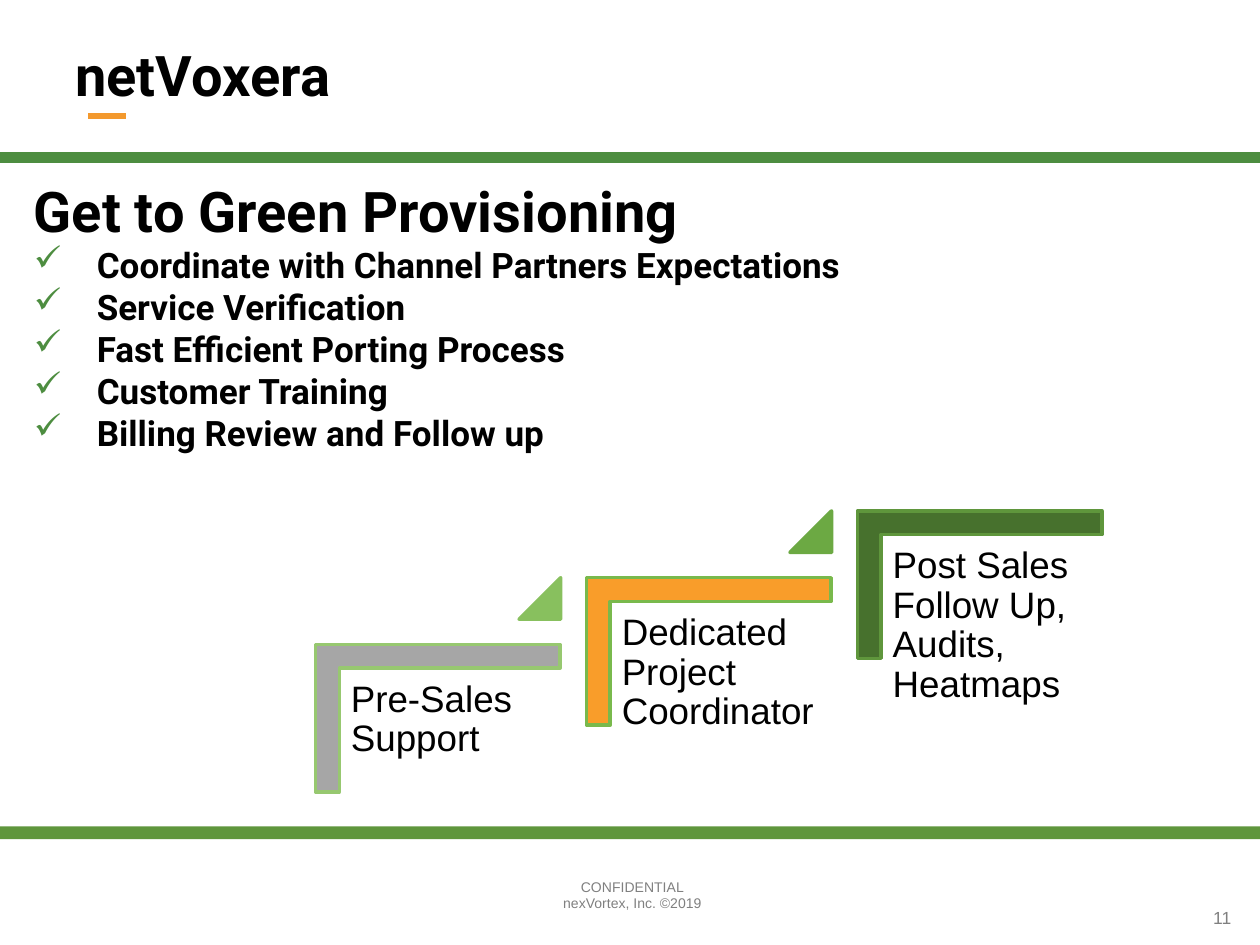
from dataclasses import dataclass
from lxml import etree
from pptx import Presentation
from pptx.dml.color import RGBColor
from pptx.enum.shapes import MSO_CONNECTOR, MSO_SHAPE
from pptx.enum.text import MSO_ANCHOR, PP_ALIGN
from pptx.oxml.ns import qn
from pptx.util import Emu, Inches, Pt

LINE = MSO_CONNECTOR.STRAIGHT
RECT = MSO_SHAPE.RECTANGLE
CORNER = MSO_SHAPE.CORNER
WEDGE = MSO_SHAPE.ISOSCELES_TRIANGLE
TOP, MID = MSO_ANCHOR.TOP, MSO_ANCHOR.MIDDLE
LEFT, CENTER, RIGHT = PP_ALIGN.LEFT, PP_ALIGN.CENTER, PP_ALIGN.RIGHT

WIDE, HIGH = Inches(10), Inches(7.5)
COLS, ROWS = 100, 75


@dataclass(frozen=True)
class Theme:
    ink: str = "000000"
    paper: str = "FFFFFF"
    muted: str = "808080"
    accent: str = "F3992E"
    rule: str = "4D8D40"
    band: str = "5F963C"
    head: str = "Roboto"
    body: str = "Arial"
    big: int = 32
    item: int = 20
    step: int = 21
    page: int = 10
    foot: int = 8


@dataclass(frozen=True)
class Box:
    col: float
    row: float
    cols: float
    rows: float

    def frame(self) -> tuple[Emu, Emu, Emu, Emu]:
        return across(self.col), down(self.row), across(self.cols), down(self.rows)


@dataclass(frozen=True)
class Style:
    font: str
    size: int
    color: str
    bold: bool = False
    align: PP_ALIGN = LEFT
    space: float = 1.0


@dataclass(frozen=True)
class Step:
    label: str
    fill: str
    edge: str
    wedge: str = ""


THEME = Theme()
TITLE = Style(THEME.head, THEME.big, THEME.ink, True)
ITEM = Style(THEME.head, THEME.item, THEME.ink, True)
LABEL = Style(THEME.body, THEME.step, THEME.ink, space=0.9)
FOOT = Style(THEME.body, THEME.foot, THEME.muted, align=CENTER)
PAGE = Style(THEME.body, THEME.page, THEME.muted, align=RIGHT)

ITEMS = [
    "Coordinate with Channel Partners Expectations",
    "Service Verification",
    "Fast Efficient Porting Process",
    "Customer Training",
    "Billing Review and Follow up",
]
STEPS = [
    Step("Pre-Sales Support", "A6A6A6", "97C870", "88C05E"),
    Step("Dedicated Project Coordinator", "F99D2A", "79B94C", "6CA943"),
    Step("Post Sales Follow Up, Audits, Heatmaps", "47712D", "5F963C"),
]
START_COL, START_ROW = 25.05, 51.15
RUN, RISE = 21.5, 5.3
ARM, LEG = 19.4, 11.7
THICK = 0.161


def across(cols: float) -> Emu:
    return Emu(round(WIDE * cols / COLS))


def down(rows: float) -> Emu:
    return Emu(round(HIGH * rows / ROWS))


def color(code: str) -> RGBColor:
    return RGBColor.from_string(code)


def add_rule(slide, col: float, row: float, end: float, code: str, width: float) -> None:
    line = slide.shapes.add_connector(LINE, across(col), down(row), across(end), down(row))
    line.line.color.rgb = color(code)
    line.line.width = Pt(width)
    etree.SubElement(line._element.spPr, qn("a:effectLst"))


def add_form(slide, kind: MSO_SHAPE, box: Box, fill: str, edge: str = ""):
    form = slide.shapes.add_shape(kind, *box.frame())
    form.shadow.inherit = False
    form.fill.solid()
    form.fill.fore_color.rgb = color(fill)
    if edge:
        form.line.color.rgb = color(edge)
        form.line.width = Pt(2)
    else:
        form.line.fill.background()
    return form


def add_check(para) -> None:
    props = para._p.get_or_add_pPr()
    props.set("marL", str(Inches(0.5)))
    props.set("indent", str(-Inches(0.5)))
    tint = etree.SubElement(props, qn("a:buClr"))
    etree.SubElement(tint, qn("a:srgbClr"), val=THEME.rule)
    etree.SubElement(props, qn("a:buChar"), char="✓")


def set_style(para, style: Style) -> None:
    para.alignment = style.align
    if style.space != 1:
        para.line_spacing = style.space
    for run in para.runs:
        run.font.name = style.font
        run.font.size = Pt(style.size)
        run.font.bold = style.bold
        run.font.color.rgb = color(style.color)


def add_text(slide, box: Box, text: str, style: Style, anchor: MSO_ANCHOR = TOP):
    shape = slide.shapes.add_textbox(*box.frame())
    frame = shape.text_frame
    frame.word_wrap = True
    frame.vertical_anchor = anchor
    frame.text = text
    for para in frame.paragraphs:
        set_style(para, style)
    return shape


def add_list(slide) -> None:
    shape = add_text(slide, Box(1.7, 13.5, 76.7, 26.6), "Get to Green Provisioning", TITLE)
    shape.fill.solid()
    shape.fill.fore_color.rgb = color(THEME.paper)
    for item in ITEMS:
        para = shape.text_frame.add_paragraph()
        para.text = item
        add_check(para)
        set_style(para, ITEM)


def add_step(slide, step: Step, index: int) -> None:
    col, row = START_COL + index * RUN, START_ROW - index * RISE
    shift = (ARM - LEG) / 2
    form = add_form(slide, CORNER, Box(col + shift, row - shift, LEG, ARM), step.fill, step.edge)
    form.rotation = 90
    form.adjustments[0] = form.adjustments[1] = THICK
    label = add_text(slide, Box(col + 1.9, row + 1.95, 17.6, 15.4), step.label, LABEL)
    frame = label.text_frame
    frame.margin_left = frame.margin_right = Inches(0.09)
    frame.margin_top = frame.margin_bottom = Inches(0.09)
    if step.wedge:
        wedge = add_form(slide, WEDGE, Box(col + 16.15, row - RISE, 3.3, 3.3), step.wedge, step.wedge)
        wedge.adjustments[0] = 1


def main() -> None:
    deck = Presentation()
    deck.slide_width, deck.slide_height = WIDE, HIGH
    slide = deck.slides.add_slide(deck.slide_layouts[6])
    add_rule(slide, 7, 9.2, 10, THEME.accent, 3)
    add_form(slide, RECT, Box(0, 65.6, COLS, 1), THEME.band)
    add_rule(slide, 0, 12.5, COLS, THEME.rule, 6)
    add_text(slide, Box(43, 69.2, 14.4, 3.7), "CONFIDENTIAL\nnexVortex, Inc. ©2019", FOOT)
    add_text(slide, Box(94.5, 70.8, 4.2, 4), "11", PAGE, MID)
    for index, step in enumerate(STEPS):
        add_step(slide, step, index)
    add_text(slide, Box(5, 1, 90, 9.7), "netVoxera", TITLE, MID)
    add_list(slide)
    deck.save("out.pptx")


if __name__ == "__main__":
    main()
